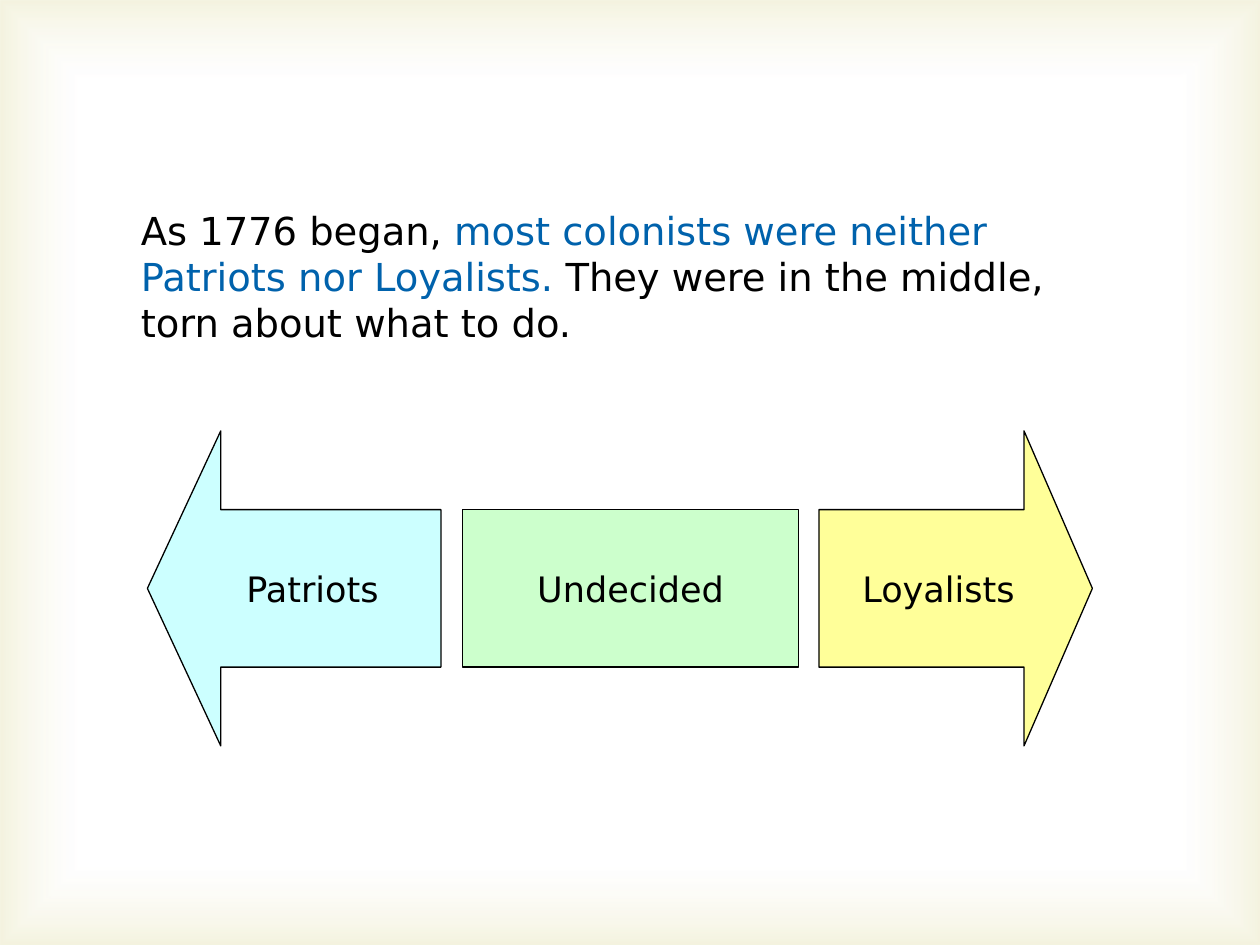
from lxml.etree import fromstring
from pptx import Presentation
from pptx.dml.color import RGBColor
from pptx.enum.shapes import MSO_SHAPE
from pptx.enum.text import MSO_ANCHOR, MSO_AUTO_SIZE, PP_ALIGN
from pptx.oxml.ns import qn
from pptx.util import Inches, Pt

FONT = "DejaVu Sans"
COLORS = {
    "text": "000000",
    "highlight": "0062AC",
    "patriots": "CCFFFF",
    "undecided": "CCFFCC",
    "loyalists": "FFFF99",
    "center": "FFFFFF",
    "edge": "D1CA75",
}
GLOW = f"""
<a:gradFill xmlns:a="http://schemas.openxmlformats.org/drawingml/2006/main" rotWithShape="1">
  <a:gsLst>
    <a:gs pos="83000"><a:srgbClr val="{COLORS['center']}"><a:alpha val="11000"/></a:srgbClr></a:gs>
    <a:gs pos="100000"><a:srgbClr val="{COLORS['edge']}"><a:alpha val="23000"/></a:srgbClr></a:gs>
  </a:gsLst>
  <a:path path="rect"><a:fillToRect l="50000" t="50000" r="50000" b="50000"/></a:path>
</a:gradFill>
"""


def color(name):
    return RGBColor.from_string(COLORS[name])


def set_font(font, size):
    font.name = FONT
    font.size = Pt(size)
    font.color.rgb = color("text")


def add_background(slide, width, height):
    shape = slide.shapes.add_shape(MSO_SHAPE.RECTANGLE, 0, 0, width, height)
    shape.shadow.inherit = False
    shape.line.fill.background()
    properties = shape.fill._xPr
    properties.find(qn("a:prstGeom")).addnext(fromstring(GLOW))


def add_statement(slide, left, top, width, height):
    frame = slide.shapes.add_textbox(left, top, width, height).text_frame
    frame.word_wrap = True
    frame.auto_size = MSO_AUTO_SIZE.SHAPE_TO_FIT_TEXT
    paragraph = frame.paragraphs[0]
    for text, color_name in (
        ("As 1776 began, ", "text"),
        ("most colonists were neither Patriots nor Loyalists. ", "highlight"),
        ("They were in the middle, torn about what to do.", "text"),
    ):
        run = paragraph.add_run()
        run.text = text
        set_font(run.font, 22)
        run.font.color.rgb = color(color_name)


def add_group_shape(slide, kind, label, left, top, width, height):
    shape = slide.shapes.add_shape(kind, left, top, width, height)
    shape.shadow.inherit = False
    shape.fill.solid()
    shape.fill.fore_color.rgb = color(label.lower())
    shape.line.color.rgb = color("text")
    shape.line.width = Pt(0.75)
    frame = shape.text_frame
    frame.word_wrap = False
    frame.vertical_anchor = MSO_ANCHOR.MIDDLE
    paragraph = frame.paragraphs[0]
    paragraph.text = label
    paragraph.alignment = PP_ALIGN.CENTER
    set_font(paragraph.font, 20)
    return shape


def add_spectrum(slide, left, top, height):
    body_height = height // 2
    body_top = top + (height - body_height) // 2
    for kind, label, offset, width in (
        (MSO_SHAPE.LEFT_ARROW, "Patriots", 0, 2.33),
        (MSO_SHAPE.RIGHT_ARROW, "Loyalists", 5.33, 2.17),
    ):
        arrow = add_group_shape(
            slide, kind, label, left + Inches(offset), top, Inches(width), height
        )
        arrow.adjustments[0] = 0.5
        arrow.adjustments[1] = 0.25
    add_group_shape(
        slide, MSO_SHAPE.RECTANGLE, "Undecided",
        left + Inches(2.5), body_top, Inches(2.67), body_height,
    )


def main():
    presentation = Presentation()
    presentation.slide_width = Inches(10)
    presentation.slide_height = Inches(7.5)
    slide = presentation.slides.add_slide(presentation.slide_layouts[6])
    add_background(slide, presentation.slide_width, presentation.slide_height)
    add_spectrum(slide, Inches(1.17), Inches(3.42), Inches(2.5))
    add_statement(slide, Inches(1.02), Inches(1.59), Inches(8), Inches(1.21))
    presentation.save("out.pptx")


if __name__ == "__main__":
    main()
